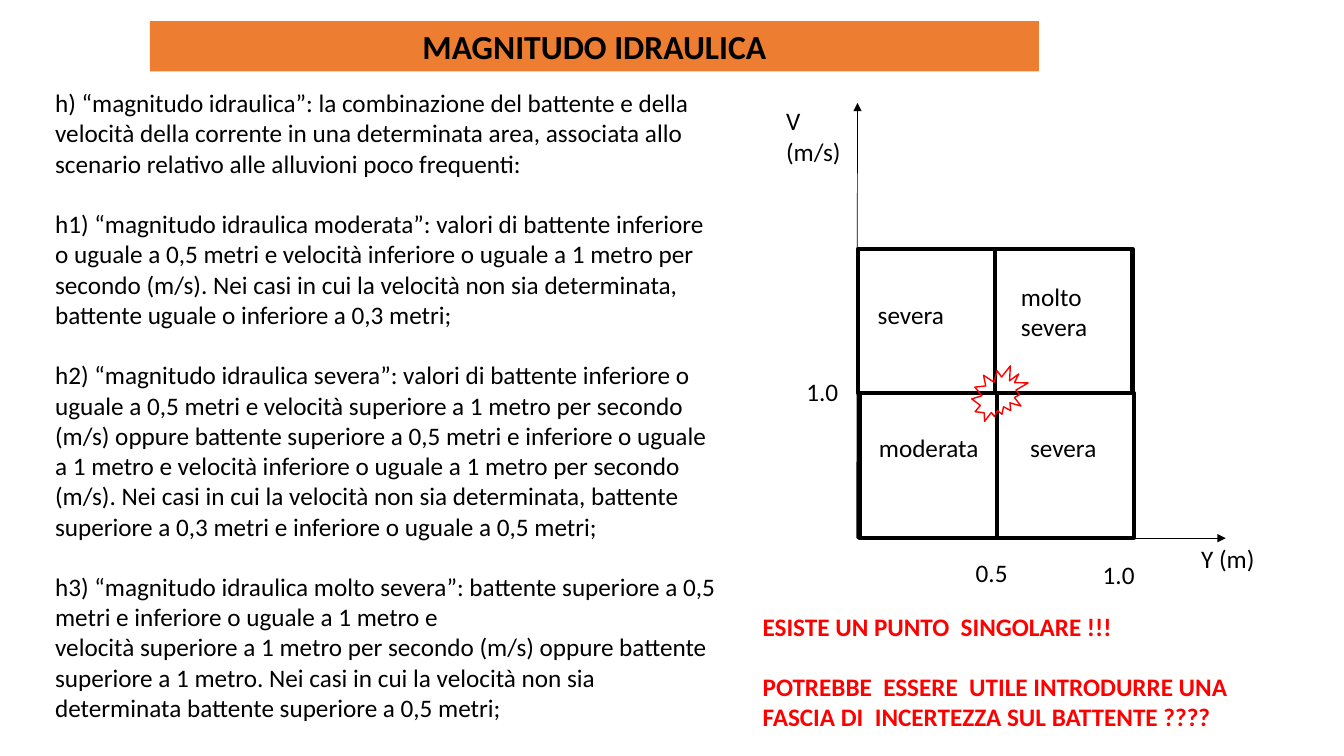
from lxml import etree
from pptx import Presentation
from pptx.dml.color import RGBColor
from pptx.enum import shapes, text
from pptx.oxml import ns
from pptx.util import Cm, Pt

BLACK = RGBColor(0, 0, 0)
RED = RGBColor(0xFF, 0, 0)
ORANGE = RGBColor(0xED, 0x7D, 0x31)
GAP = 21.6  # one line of body text, in points

# Each group is set apart from the one before it
DEFINITIONS = [
    ["h) “magnitudo idraulica”: la combinazione del battente e della velocità "
     "della corrente in una determinata area, associata allo scenario relativo "
     "alle alluvioni poco frequenti:"],
    ["h1) “magnitudo idraulica moderata”: valori di battente inferiore o uguale "
     "a 0,5 metri e velocità inferiore o uguale a 1 metro per secondo (m/s). Nei "
     "casi in cui la velocità non sia determinata, battente uguale o inferiore a "
     "0,3 metri;"],
    ["h2) “magnitudo idraulica severa”: valori di battente inferiore o uguale a "
     "0,5 metri e velocità superiore a 1 metro per secondo (m/s) oppure battente "
     "superiore a 0,5 metri e inferiore o uguale a 1 metro e velocità inferiore o "
     "uguale a 1 metro per secondo (m/s). Nei casi in cui la velocità non sia "
     "determinata, battente superiore a 0,3 metri e inferiore o uguale a 0,5 metri;"],
    ["h3) “magnitudo idraulica molto severa”: battente superiore a 0,5 metri e "
     "inferiore o uguale a 1 metro e",
     "velocità superiore a 1 metro per secondo (m/s) oppure battente superiore a "
     "1 metro. Nei casi in cui la velocità non sia determinata battente superiore "
     "a 0,5 metri;"],
]
REMARKS = [
    ["ESISTE UN PUNTO  SINGOLARE !!!"],
    ["POTREBBE  ESSERE  UTILE INTRODURRE UNA FASCIA DI  INCERTEZZA SUL BATTENTE ????"],
]

# Diagram labels: text, offset from the diagram corner, width, height
LABELS = [
    ("V (m/s)", 0, 0, 2.06, 1.8),
    ("Y (m)", 10.46, 11.02, 2.06, 1.02),
    ("0.5", 4.78, 11.38, 2.06, 1.02),
    ("1.0", 7.98, 11.43, 2.06, 1.02),
    ("1.0", 0.51, 6.83, 2.06, 1.02),
    ("moderata", 2.34, 8.23, 3.48, 1.02),
    ("severa", 2.31, 4.88, 3.48, 1.02),
    ("severa", 6.15, 8.23, 3.48, 1.02),
    ("molto severa", 5.92, 4.42, 3.48, 1.8),
]


def style_font(p, size, color, bold):
    for r in p.runs:
        r.font.name = "Calibri"
        r.font.size = Pt(size)
        r.font.bold = bold
        r.font.color.rgb = color


def add_title(s, x, y, w, h):
    sp = s.shapes.title
    sp.left, sp.top, sp.width, sp.height = Cm(x), Cm(y), Cm(w), Cm(h)
    sp.fill.solid()
    sp.fill.fore_color.rgb = ORANGE
    tf = sp.text_frame
    tf.text = "MAGNITUDO IDRAULICA"
    tf.auto_size = text.MSO_AUTO_SIZE.NONE
    tf.vertical_anchor = text.MSO_ANCHOR.MIDDLE
    p = tf.paragraphs[0]
    p.alignment = text.PP_ALIGN.CENTER
    p.line_spacing = 1.0
    style_font(p, 24, BLACK, True)


def add_text(s, groups, x, y, w, h, color=BLACK, bold=False):
    tf = s.shapes.add_textbox(Cm(x), Cm(y), Cm(w), Cm(h)).text_frame
    tf.word_wrap = True
    for g, group in enumerate(groups):
        for i, line in enumerate(group):
            first = g == 0 and i == 0
            p = tf.paragraphs[0] if first else tf.add_paragraph()
            p.text = line
            if g and i == 0:
                p.space_before = Pt(GAP)
            style_font(p, 18, color, bold)


def add_outline(s, kind, x, y, w, h, color, weight):
    sp = s.shapes.add_shape(kind, Cm(x), Cm(y), Cm(w), Cm(h))
    sp.shadow.inherit = False
    sp.fill.background()
    sp.line.color.rgb = color
    sp.line.width = Pt(weight)


def add_axis(s, x1, y1, x2, y2):
    c = s.shapes.add_connector(shapes.MSO_CONNECTOR.STRAIGHT,
                               Cm(x1), Cm(y1), Cm(x2), Cm(y2))
    c.line.color.rgb = BLACK
    c.line.width = Pt(0.5)
    etree.SubElement(c.line._get_or_add_ln(), ns.qn("a:tailEnd"), type="triangle")
    etree.SubElement(c._element.spPr, ns.qn("a:effectLst"))


def add_diagram(s, x, y):
    # Axes
    x0, y0 = x + 2.03, y + 11.02
    add_axis(s, x0, y0, x0 + 0.02, y + 0.05)
    add_axis(s, x0, y0, x + 11.33, y0)
    # Two by two classes, the lower row set slightly to the right
    cell_w, cell_h, shift = 3.46, 3.64, 0.04
    for row in range(2):
        for col in range(2):
            add_outline(s, shapes.MSO_SHAPE.RECTANGLE,
                        x + 2.06 + col * cell_w + row * shift,
                        y + 3.73 + row * cell_h, cell_w, cell_h, BLACK, 3)
    # Labels
    for label, dx, dy, w, h in LABELS:
        add_text(s, [[label]], x + dx, y + dy, w, h)
    # Singular point
    add_outline(s, shapes.MSO_SHAPE.EXPLOSION2, x + 4.93, y + 6.68, 1.42, 1.4, RED, 1)


def main():
    prs = Presentation()
    prs.slide_width, prs.slide_height = Cm(33.87), Cm(19.05)
    s = prs.slides.add_slide(prs.slide_layouts[5])
    add_title(s, 3.78, 0.53, 22.4, 1.27)
    add_text(s, DEFINITIONS, 1.14, 2.08, 17.15, 16.41)
    add_diagram(s, 19.56, 2.54)
    add_text(s, REMARKS, 18.97, 15.27, 13.82, 3.33, RED, True)
    prs.save("out.pptx")


if __name__ == "__main__":
    main()
